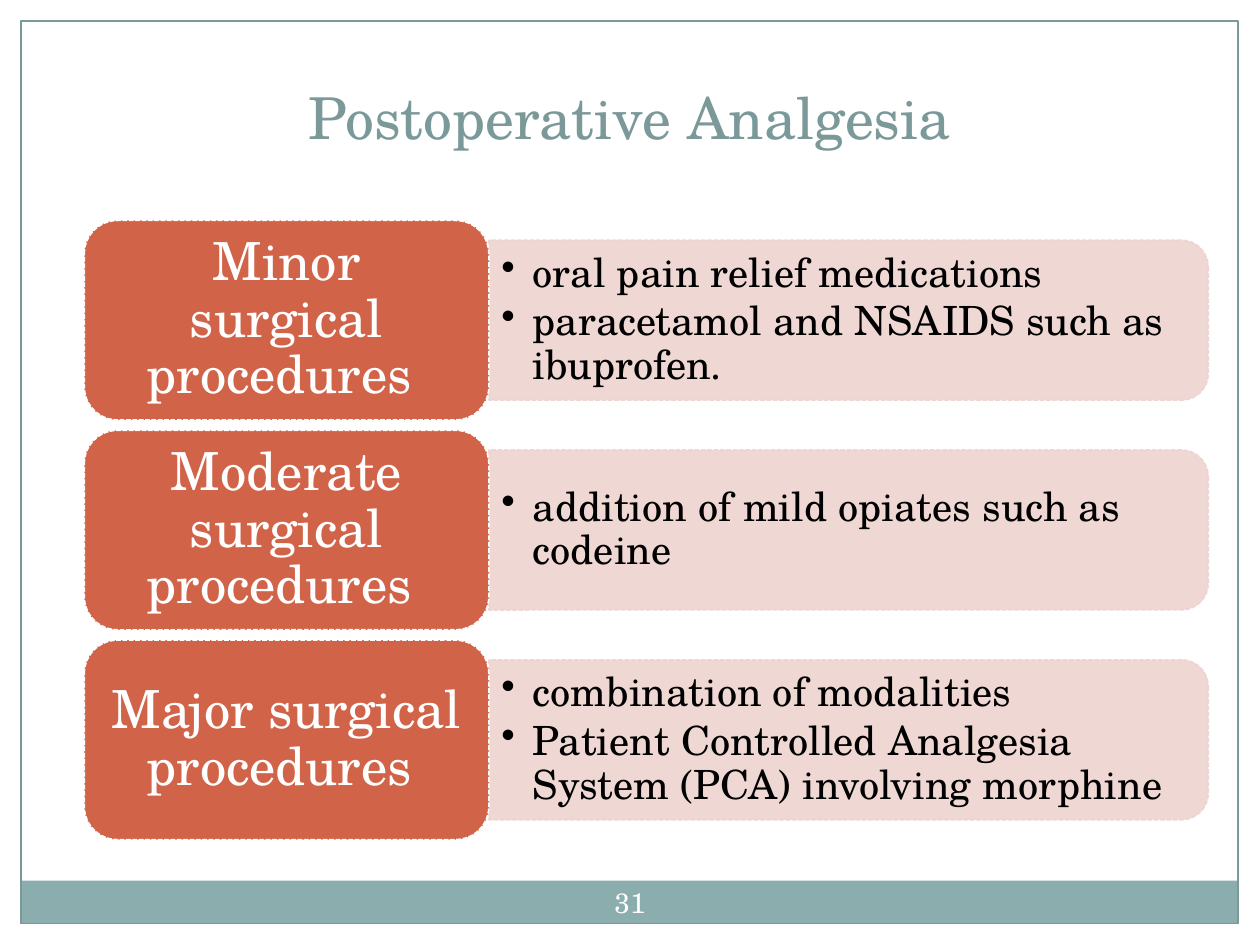
from lxml.etree import SubElement
from pptx import Presentation
from pptx.dml.color import RGBColor
from pptx.enum.dml import MSO_LINE
from pptx.enum.shapes import MSO_SHAPE
from pptx.enum.text import MSO_ANCHOR, PP_ALIGN
from pptx.oxml.ns import qn
from pptx.util import Pt

FONT = "TeX Gyre Schola"
WHITE = RGBColor(0xFF, 0xFF, 0xFF)
BLACK = RGBColor(0x00, 0x00, 0x00)
TEAL = RGBColor(0x7C, 0x99, 0x9A)
BAND = RGBColor(0x8C, 0xAD, 0xAE)
RUST = RGBColor(0xD1, 0x63, 0x49)
BLUSH = RGBColor(0xEE, 0xD3, 0xD0)

# Row grid, in points
ROW_TOP, ROW_PITCH = 126, 119.9
CARD_LEFT, CARD_WIDTH, CARD_HEIGHT = 48.2, 231.2, 114
PANEL_WIDTH, PANEL_HEIGHT = 411, 91.4
LIST_WIDTH, LIST_HEIGHT = 406, 82

PROCEDURES = [
    ("Minor surgical procedures ",
     ["oral pain relief medications",
      "paracetamol and NSAIDS such as ibuprofen."]),
    ("Moderate surgical procedures ",
     ["addition of mild opiates such as codeine"]),
    ("Major surgical procedures ",
     ["combination of modalities",
      "Patient Controlled Analgesia System (PCA) involving morphine"]),
]


def add_bullet(paragraph, indent=18):
    properties = paragraph._p.get_or_add_pPr()
    properties.set("marL", str(Pt(indent)))
    properties.set("indent", str(-Pt(indent)))
    SubElement(properties, qn("a:buChar")).set("char", "•")


def write_text(shape, *lines, size, color, align=PP_ALIGN.CENTER,
               insets=(7.2, 3.6), spacing=None, after=0, bullets=False):
    frame = shape.text_frame
    frame.word_wrap = True
    frame.vertical_anchor = MSO_ANCHOR.MIDDLE
    frame.margin_left = frame.margin_right = Pt(insets[0])
    frame.margin_top = frame.margin_bottom = Pt(insets[1])
    for index, line in enumerate(lines):
        paragraph = frame.add_paragraph() if index else frame.paragraphs[0]
        paragraph.alignment = align
        paragraph.line_spacing = spacing
        paragraph.space_after = Pt(after)
        if bullets:
            add_bullet(paragraph)
        run = paragraph.add_run()
        run.text = line
        run.font.name = FONT
        run.font.size = Pt(size)
        run.font.color.rgb = color


def place(shape, left, top, width, height):
    shape.left, shape.top = Pt(left), Pt(top)
    shape.width, shape.height = Pt(width), Pt(height)


def add_box(slide, kind, left, top, width, height, fill=None, line=None,
            line_width=0.9, dash=None):
    box = slide.shapes.add_shape(kind, Pt(left), Pt(top), Pt(width), Pt(height))
    box.shadow.inherit = False
    if fill is None:
        box.fill.background()
    else:
        box.fill.solid()
        box.fill.fore_color.rgb = fill
    if line is None:
        box.line.fill.background()
    else:
        box.line.color.rgb = line
        box.line.width = Pt(line_width)
        box.line.dash_style = dash
    return box


def add_textbox(slide, left, top, width, height):
    return slide.shapes.add_textbox(Pt(left), Pt(top), Pt(width), Pt(height))


def add_panel(slide, left, middle):
    """Pale panel rounded on the right: a top-rounded shape turned by 90°."""
    panel = add_box(slide, MSO_SHAPE.ROUND_2_SAME_RECTANGLE,
                    left + (PANEL_WIDTH - PANEL_HEIGHT) / 2,
                    middle - PANEL_WIDTH / 2, PANEL_HEIGHT, PANEL_WIDTH,
                    fill=BLUSH, line=BLUSH, dash=MSO_LINE.SQUARE_DOT)
    panel.rotation = 90
    for color in panel._element.spPr.iter(qn("a:srgbClr")):
        SubElement(color, qn("a:alpha")).set("val", "90000")


def add_procedure_row(slide, top, procedure, treatments):
    middle = top + CARD_HEIGHT / 2
    card_right = CARD_LEFT + CARD_WIDTH
    add_panel(slide, card_right, middle)
    treatment_list = add_textbox(slide, card_right, middle - LIST_HEIGHT / 2,
                                 LIST_WIDTH, LIST_HEIGHT)
    write_text(treatment_list, *treatments, size=23, color=BLACK,
               align=PP_ALIGN.LEFT, spacing=0.9, after=3, bullets=True)
    card = add_box(slide, MSO_SHAPE.ROUNDED_RECTANGLE, CARD_LEFT, top,
                   CARD_WIDTH, CARD_HEIGHT, fill=RUST, line=WHITE,
                   dash=MSO_LINE.SQUARE_DOT)
    write_text(card, procedure, size=30, color=WHITE, insets=(8.5, 4.3),
               spacing=0.9)


def main():
    deck = Presentation()
    deck.slide_width, deck.slide_height = Pt(720), Pt(540)
    slide = deck.slides.add_slide(deck.slide_layouts[5])

    # Footer band, frame and page number
    add_box(slide, MSO_SHAPE.RECTANGLE, 11.8, 503.3, 695.5, 24.5, fill=BAND)
    add_box(slide, MSO_SHAPE.RECTANGLE, 12, 12, 695.5, 515.8, line=TEAL,
            line_width=0.75)
    page_number = add_textbox(slide, 336, 498.5, 48, 34.5)
    write_text(page_number, "31", size=16, color=WHITE, insets=(3.6, 3.6))

    # Title
    title = slide.shapes.title
    place(title, 36, 21.6, 648, 90)
    write_text(title, "Postoperative Analgesia", size=33, color=TEAL)

    # One row per class of procedure
    for row, (procedure, treatments) in enumerate(PROCEDURES):
        add_procedure_row(slide, ROW_TOP + row * ROW_PITCH, procedure, treatments)

    deck.save("out.pptx")


if __name__ == "__main__":
    main()
